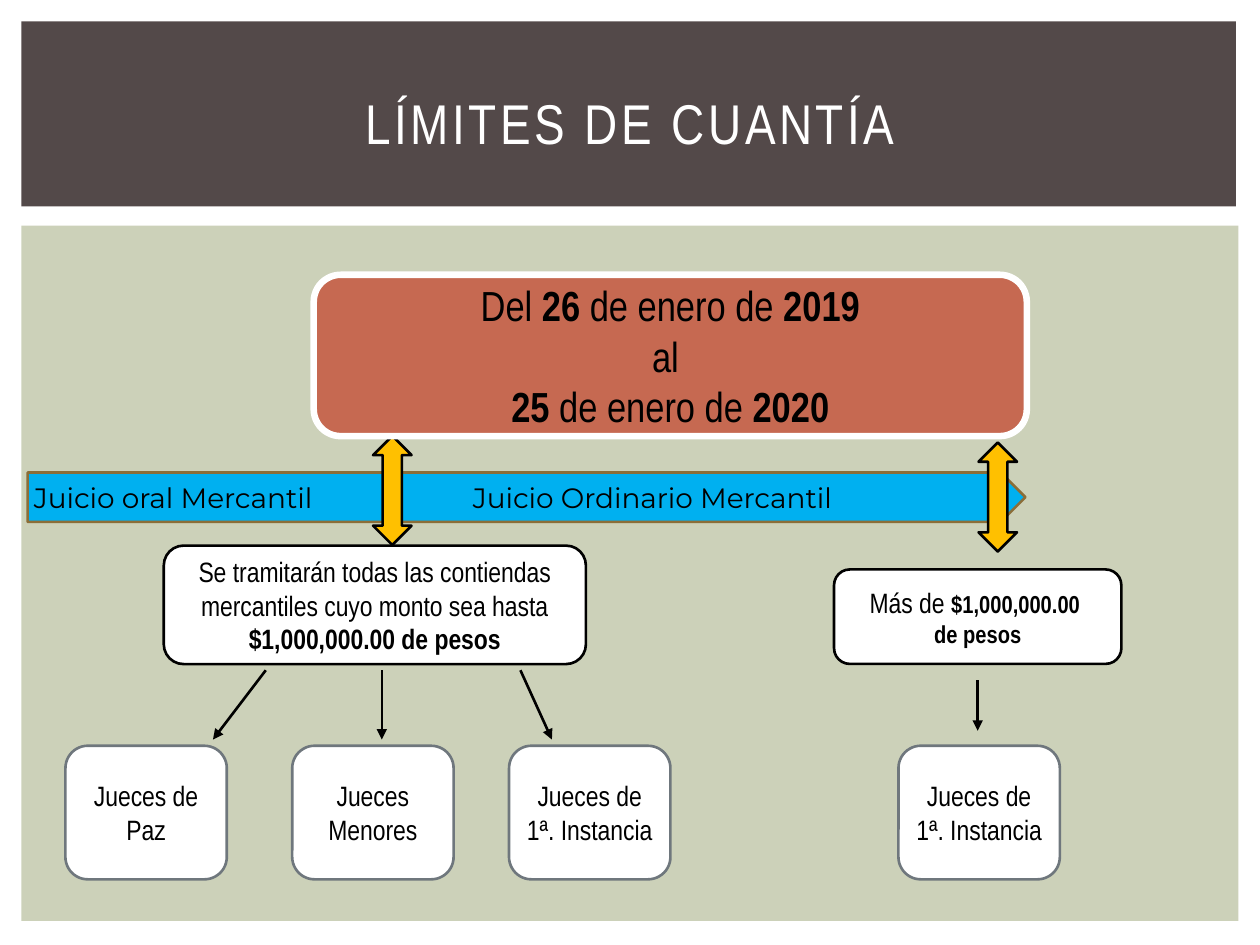
from lxml import etree
from pptx import Presentation
from pptx.dml.color import RGBColor
from pptx.enum.shapes import MSO_CONNECTOR as Connector, MSO_SHAPE as Shape
from pptx.enum.text import MSO_ANCHOR as Anchor, PP_ALIGN as Align
from pptx.oxml.ns import qn
from pptx.util import Pt

WHITE = RGBColor(0xFF, 0xFF, 0xFF)
BLACK = RGBColor(0x00, 0x00, 0x00)
SAGE = RGBColor(0xCC, 0xD1, 0xB9)
BROWN = RGBColor(0x53, 0x49, 0x49)
BLUE = RGBColor(0x00, 0xB0, 0xF0)
OCHRE = RGBColor(0x8B, 0x6E, 0x38)
GOLD = RGBColor(0xFF, 0xC0, 0x00)
RUST = RGBColor(0xC6, 0x69, 0x51)
GREY = RGBColor(0x6F, 0x77, 0x7D)

NARROW = "Arial Narrow"
JUDGE_TOP, JUDGE_WIDTH, JUDGE_HEIGHT = 426.2, 92.2, 76.3


def add_block(slide, kind, box, fill, line=None, weight=1.5):
    """Filled preset shape; box is left, top, width, height in points."""
    block = slide.shapes.add_shape(kind, *map(Pt, box))
    block.shadow.inherit = False
    block.fill.solid()
    block.fill.fore_color.rgb = fill
    if line is None:
        block.line.fill.background()
    else:
        block.line.color.rgb = line
        block.line.width = Pt(weight)
    return block


def write(holder, paragraphs, size=16, font=NARROW, color=BLACK, align=Align.CENTER):
    """Each paragraph is a list of (text, bold) or (text, bold, size) runs."""
    frame = holder.text_frame
    frame.word_wrap = True
    frame.vertical_anchor = Anchor.MIDDLE
    frame.margin_left = frame.margin_right = Pt(3.6)
    frame.margin_top = frame.margin_bottom = Pt(3.6)
    for index, runs in enumerate(paragraphs):
        paragraph = frame.add_paragraph() if index else frame.paragraphs[0]
        paragraph.alignment = align
        for text, bold, *own_size in runs:
            run = paragraph.add_run()
            run.text = text
            run.font.name = font
            run.font.size = Pt(own_size[0] if own_size else size)
            run.font.bold = bold
            run.font.color.rgb = color
    return frame


def add_card(slide, box, paragraphs, fill=WHITE, line=BLACK, weight=1.5, size=16):
    card = add_block(slide, Shape.ROUNDED_RECTANGLE, box, fill, line, weight)
    card.adjustments[0] = 0.167
    write(card, paragraphs, size)


def add_arrow(slide, x1, y1, x2, y2):
    arrow = slide.shapes.add_connector(Connector.STRAIGHT, *map(Pt, (x1, y1, x2, y2)))
    arrow.line.color.rgb = BLACK
    arrow.line.width = Pt(1.5)
    etree.SubElement(arrow.line._get_or_add_ln(), qn("a:tailEnd"), type="triangle")
    etree.SubElement(arrow._element.spPr, qn("a:effectLst"))


def add_title(slide):
    add_block(slide, Shape.RECTANGLE, (12.2, 12.2, 694.1, 105.8), BROWN)
    title = slide.shapes.add_textbox(*map(Pt, (30.2, 28.1, 660.2, 82.8)))
    frame = write(title, [[("LÍMITES DE CUANTÍA", False)]], 32, color=WHITE)
    frame.paragraphs[0].runs[0].font._element.set("spc", "200")


def add_trial_band(slide):
    band = add_block(slide, Shape.PENTAGON, (15.8, 270, 570.2, 28.2), BLUE, OCHRE)
    frame = write(band, [[("Juicio oral Mercantil\tJuicio Ordinario Mercantil", False)]],
                  font="Montserrat", align=Align.LEFT)
    # The tab stop places the second kind of trial
    tabs = etree.SubElement(frame.paragraphs[0]._p.get_or_add_pPr(), qn("a:tabLst"))
    etree.SubElement(tabs, qn("a:tab"), pos=str(Pt(250.8)), algn="l")


def add_limit_marker(slide, left, top):
    add_block(slide, Shape.UP_DOWN_ARROW, (left, top, 22, 62.3), GOLD, BLACK)


def main():
    deck = Presentation()
    deck.slide_width, deck.slide_height = Pt(720), Pt(540)
    slide = deck.slides.add_slide(deck.slide_layouts[6])

    # Background panel and heading
    add_block(slide, Shape.RECTANGLE, (12.2, 128.9, 695.5, 397.4), SAGE)
    add_title(slide)

    # Trial band, period and limits
    add_trial_band(slide)
    add_limit_marker(slide, 213.2, 249.1)
    add_card(slide, (179.3, 157, 407.5, 92.2), [
        [("Del ", False), ("26", True), (" de enero de ", False), ("2019", True)],
        [("al ", False)],
        [("25", True), (" de enero de ", False), ("2020", True)],
    ], RUST, WHITE, 3.75, 24)
    add_limit_marker(slide, 559.2, 252.9)

    # Amounts
    add_card(slide, (93.6, 311.8, 241.2, 67.7), [[
        ("Se tramitarán todas las contiendas mercantiles cuyo monto sea hasta ", False),
        ("$1,000,000.00 de pesos", True),
    ]])
    add_card(slide, (476.6, 325.4, 164.2, 54), [
        [("Más de ", False), ("$1,000,000.00 ", True, 14)],
        [("de pesos", True, 14)],
    ])

    # Competent judges
    for left, judge in ((37.4, "Jueces de Paz"), (167, "Jueces Menores"),
                        (290.9, "Jueces de 1ª. Instancia"),
                        (513.4, "Jueces de 1ª. Instancia")):
        add_card(slide, (left, JUDGE_TOP, JUDGE_WIDTH, JUDGE_HEIGHT),
                 [[(judge, False)]], line=GREY)

    # Arrows from amounts to judges
    for start, end in ((151.9, 121.7), (218.2, 218.2), (297.4, 315.4)):
        add_arrow(slide, start, 383, end, 422.6)
    add_arrow(slide, 558.7, 388.8, 558.7, 417.6)

    deck.save("out.pptx")


if __name__ == "__main__":
    main()
